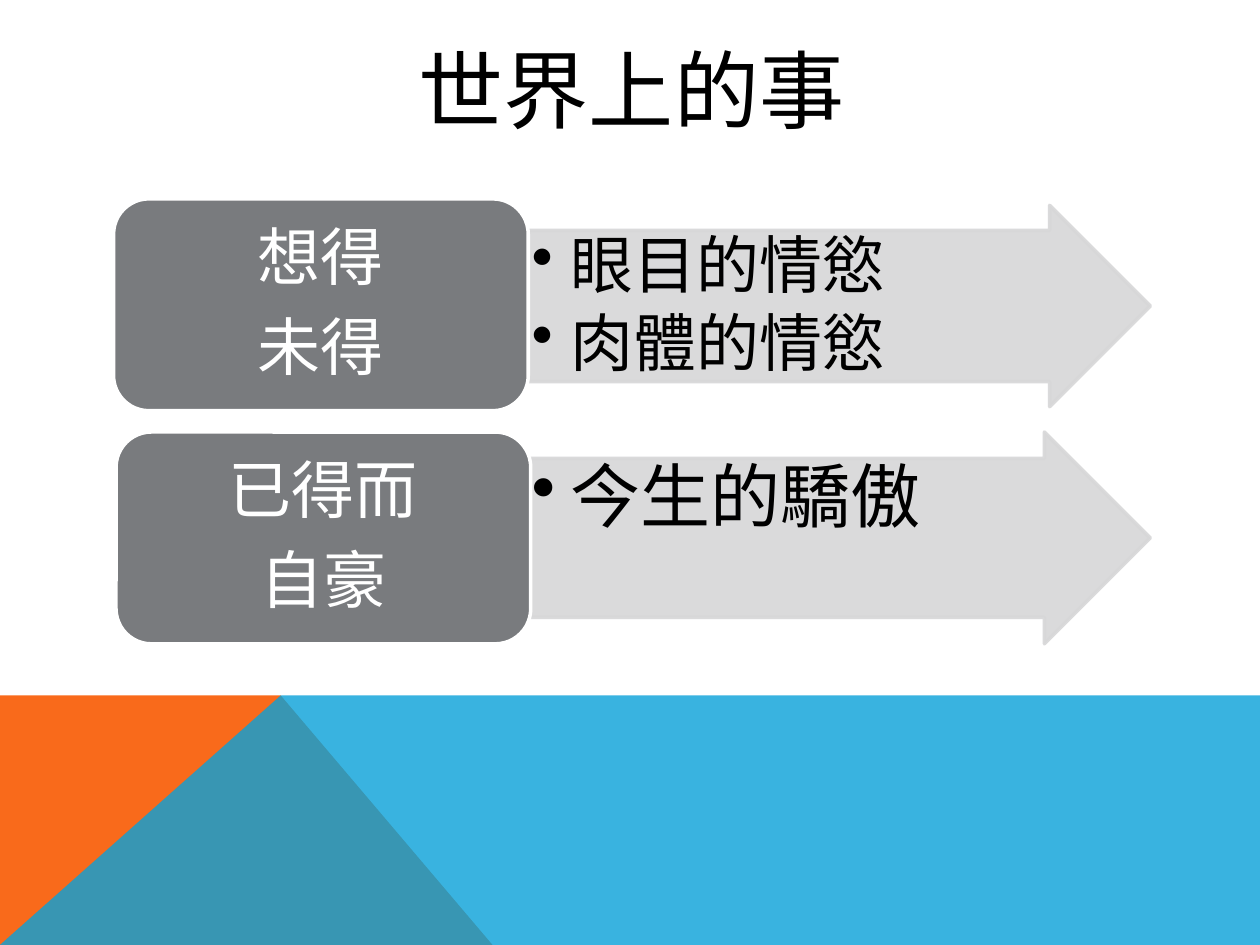
from lxml import etree
from pptx import Presentation
from pptx.dml.color import RGBColor
from pptx.enum.shapes import MSO_SHAPE
from pptx.enum.text import MSO_ANCHOR, MSO_AUTO_SIZE, PP_ALIGN
from pptx.oxml.ns import qn
from pptx.util import Cm, Pt

ARROW = MSO_SHAPE.RIGHT_ARROW
ROUNDED = MSO_SHAPE.ROUNDED_RECTANGLE
TOP, MIDDLE = MSO_ANCHOR.TOP, MSO_ANCHOR.MIDDLE
LEFT, CENTER = PP_ALIGN.LEFT, PP_ALIGN.CENTER
NO_AUTOFIT = MSO_AUTO_SIZE.NONE
FONT = "Lato"


def paint(fmt, color, opacity=100):
    """Give a fill a solid colour, with the opacity in percent."""
    fmt.solid()
    fmt.fore_color.rgb = RGBColor.from_string(color)
    if opacity < 100:
        for srgb in fmt._xPr.iter(qn("a:srgbClr")):
            etree.SubElement(srgb, qn("a:alpha"), val=str(opacity * 1000))


def write(frame, lines, size, color, frame_format, paragraph_format, bullet=False):
    for name, value in frame_format.items():
        setattr(frame, name, value)
    for number, line in enumerate(lines):
        paragraph = frame.add_paragraph() if number else frame.paragraphs[0]
        for name, value in paragraph_format.items():
            setattr(paragraph, name, value)
        if bullet:
            props = paragraph._p.get_or_add_pPr()
            props.set("marL", str(Cm(0.79)))
            props.set("indent", str(-Cm(0.79)))
            etree.SubElement(props, qn("a:buChar"), char="•")
        run = paragraph.add_run()
        run.text = line
        run.font.size = Pt(size)
        run.font.name = FONT
        run.font.color.rgb = RGBColor.from_string(color)
        etree.SubElement(run._r.get_or_add_rPr(), qn("a:ea"), typeface=FONT)


prs = Presentation()
prs.slide_width, prs.slide_height = Cm(25.4), Cm(19.05)
slide = prs.slides.add_slide(prs.slide_layouts[5])

# Coloured band along the bottom
band_top, peak, foot = 14.02, 5.66, 9.93
band_parts = [
    ([(0, 19.05), (0, band_top), (peak, band_top), (foot, 19.05)], "F96A1B", 100),
    ([(0, 19.05), (peak, band_top), (25.4, band_top), (25.4, 19.05)], "08A1D9", 80),
]
for corners, color, opacity in band_parts:
    start, *rest = [(Cm(x), Cm(y)) for x, y in corners]
    outline = slide.shapes.build_freeform(*start)
    outline.add_line_segments(rest, close=True)
    part = outline.convert_to_shape()
    part.shadow.inherit = False
    paint(part.fill, color, opacity)
    part.line.fill.background()

title = slide.shapes.title
title.left, title.top, title.width, title.height = Cm(2.29), Cm(1.02), Cm(20.88), Cm(1.52)
write(title.text_frame, ["世界上的事"], 48.6, "000000",
      {"vertical_anchor": MIDDLE, "auto_size": NO_AUTOFIT, "word_wrap": True},
      {"alignment": CENTER})

arrow_frame = {"vertical_anchor": TOP, "word_wrap": True, "margin_left": Cm(0.08),
               "margin_right": Cm(0.08), "margin_top": Cm(0.08), "margin_bottom": Cm(0.08)}
label_frame = {"vertical_anchor": MIDDLE, "word_wrap": True, "margin_left": Cm(0.38),
               "margin_right": Cm(0.38), "margin_top": Cm(0.18), "margin_bottom": Cm(0.18)}

# Each row: label place and lines, then arrow top, height, lines and text size
rows = [
    (2.29, 4.01, ["想得", "未得"], 4.14, 4.06, ["眼目的情慾", "肉體的情慾"], 36),
    (2.34, 8.71, ["已得而", "自豪"], 8.71, 4.27, ["今生的驕傲"], 40),
]
for label_left, label_top, label_lines, arrow_top, arrow_height, points, size in rows:
    arrow = slide.shapes.add_shape(ARROW, Cm(10.64), Cm(arrow_top), Cm(12.55), Cm(arrow_height))
    arrow.adjustments[0] = 0.75
    arrow.adjustments[1] = 0.5
    paint(arrow.fill, "D7D7D8", 90)
    paint(arrow.line.fill, "D7D7D8", 90)
    write(arrow.text_frame, points, size, "000000", arrow_frame,
          {"alignment": LEFT, "line_spacing": 0.9, "space_after": Pt(size * 0.15)}, bullet=True)

    label = slide.shapes.add_shape(ROUNDED, Cm(label_left), Cm(label_top), Cm(8.36), Cm(4.27))
    paint(label.fill, "797B7E")
    paint(label.line.fill, "FFFFFF")
    write(label.text_frame, label_lines, 36, "FFFFFF", label_frame,
          {"alignment": CENTER, "line_spacing": 0.9, "space_after": Pt(12.6)})

    for shape in (arrow, label):
        shape.shadow.inherit = False
        shape.line.width = Pt(2)

prs.save("out.pptx")
